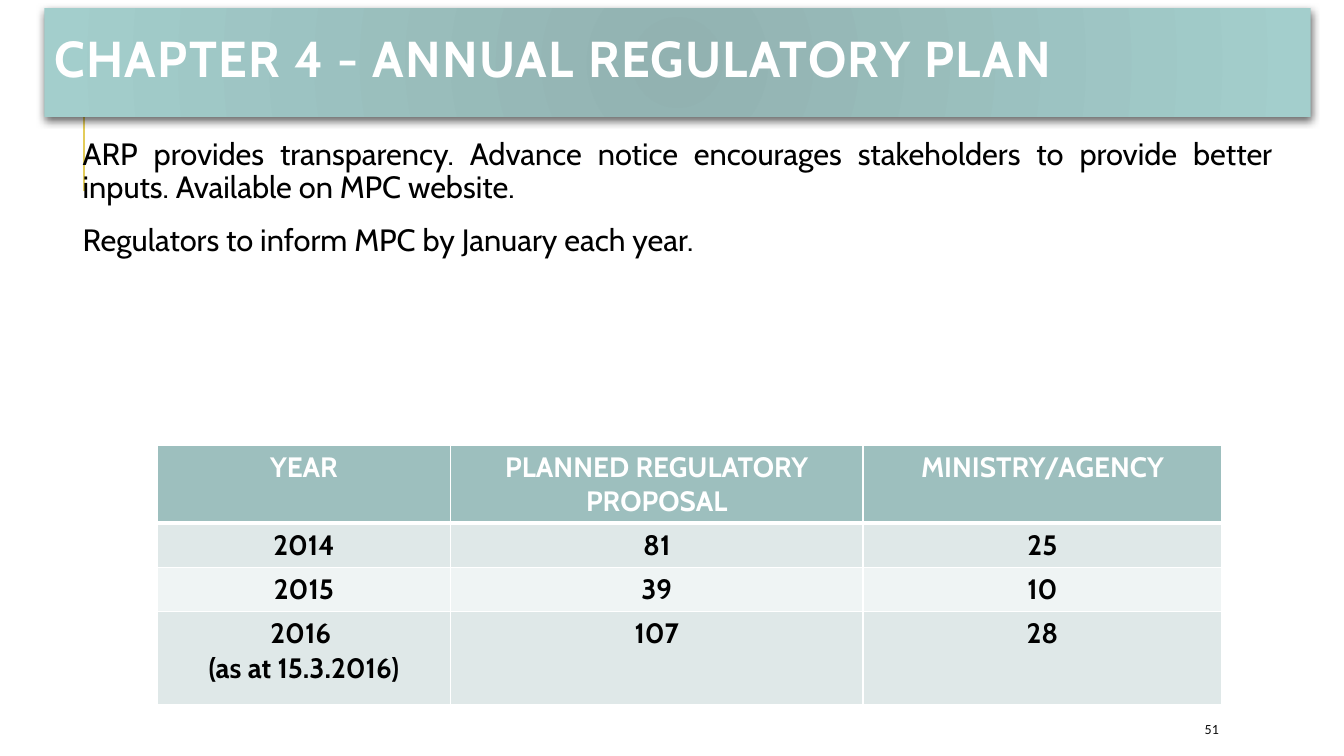
from dataclasses import dataclass
from typing import Any

import pptx
import pptx.dml.color
import pptx.enum.shapes
import pptx.enum.text
import pptx.oxml
import pptx.util
from lxml import etree
from pptx.enum.text import MSO_ANCHOR, PP_ALIGN

WIDTH, HEIGHT = pptx.util.Inches(13.33), pptx.util.Inches(7.5)
NS = 'xmlns:a="http://schemas.openxmlformats.org/drawingml/2006/main"'
COLORS = {
    "white": "FFFFFF", "black": "000000", "ink": "0D0D0D", "gold": "E3CC5A",
    "dark": "92B2B1", "light": "A3CECC", "head": "9DBFBE",
    "odd": "DFE8E8", "even": "EFF4F4",
}


@dataclass
class Area:
    """Left, top, width and height in percent of the slide."""
    left: float
    top: float
    width: float
    height: float

    def box(self) -> tuple[int, int, int, int]:
        return (across(self.left), down(self.top),
                across(self.width), down(self.height))


@dataclass
class Style:
    font: dict[str, Any]
    color: str
    para: dict[str, Any]


@dataclass
class Row:
    share: float
    fill: str
    color: str
    cells: tuple[str, str, str]


TITLE = Style({"name": "Cabin", "size": pptx.util.Pt(36), "bold": True}, "white",
              {"alignment": PP_ALIGN.LEFT, "line_spacing": 0.8})
BODY = Style({"name": "Cabin", "size": pptx.util.Pt(22)}, "black",
             {"alignment": PP_ALIGN.JUSTIFY, "line_spacing": 0.9,
              "space_after": pptx.util.Pt(2)})
NUMBER = Style({"name": "Calibri", "size": pptx.util.Pt(10)}, "ink",
               {"alignment": PP_ALIGN.LEFT})
CELL = {"name": "Cabin", "size": pptx.util.Pt(20), "bold": True}

COLS = (21.83, 30.68, 26.71)
ROWS = (
    Row(10.27, "head", "white",
        ("YEAR", "PLANNED REGULATORY PROPOSAL", "MINISTRY/AGENCY")),
    Row(5.87, "odd", "black", ("2014", "81", "25")),
    Row(5.87, "even", "black", ("2015", "39", "10")),
    Row(12.27, "odd", "black", ("2016 \n(as at 15.3.2016)", "107", "28")),
)
NOTES = (
    "ARP provides transparency. Advance notice encourages stakeholders "
    "to provide better inputs. Available on MPC website.",
    "Regulators to inform MPC by January each year.",
)


def across(share: float) -> int:
    return round(WIDTH * share / 100)


def down(share: float) -> int:
    return round(HEIGHT * share / 100)


def tint(name: str) -> pptx.dml.color.RGBColor:
    return pptx.dml.color.RGBColor.from_string(COLORS[name])


def apply(target: Any, values: dict[str, Any]) -> None:
    for key, value in values.items():
        setattr(target, key, value)


def write(frame: Any, text: str, style: Style) -> None:
    frame.text = text
    for para in frame.paragraphs:
        apply(para, style.para)
        for run in para.runs:
            apply(run.font, style.font)
            run.font.color.rgb = tint(style.color)


def add_rule(slide: Any) -> None:
    kind = pptx.enum.shapes.MSO_CONNECTOR.STRAIGHT
    rule = slide.shapes.add_connector(
        kind, across(6.23), down(25.33), across(6.23), down(12))
    rule.line.color.rgb = tint("gold")
    rule.line.width = pptx.util.Pt(1.5)
    rule._element.spPr.append(pptx.oxml.parse_xml(f"<a:effectLst {NS}/>"))


def add_body(slide: Any) -> None:
    frame = slide.shapes.add_textbox(*Area(5.03, 17.73, 90.02, 66).box()).text_frame
    inset = pptx.util.Inches(0.05)
    apply(frame, {"word_wrap": True, "margin_left": inset, "margin_right": inset,
                  "margin_top": inset, "margin_bottom": inset})
    write(frame, "\n".join(NOTES), BODY)
    for para in frame.paragraphs:
        para._p.get_or_add_pPr().set("marL", str(pptx.util.Inches(0.1)))
    for para in frame.paragraphs[1:]:
        para.space_before = pptx.util.Pt(12)


def add_edges(cell: Any, base: float) -> None:
    """Draw white cell borders, the bottom one with its own width in points."""
    props = cell._tc.get_or_add_tcPr()
    edges = {"lnL": 1, "lnR": 1, "lnT": 1, "lnB": base}
    for place, (tag, width) in enumerate(edges.items()):
        props.insert(place, pptx.oxml.parse_xml(
            f'<a:{tag} {NS} w="{pptx.util.Pt(width)}"><a:solidFill>'
            f'<a:srgbClr val="{COLORS["white"]}"/></a:solidFill></a:{tag}>'))


def add_grid(slide: Any) -> None:
    area = Area(11.7, 58.93, sum(COLS), sum(row.share for row in ROWS))
    table = slide.shapes.add_table(len(ROWS), len(COLS), *area.box()).table
    table.horz_banding = False
    for col, share in zip(table.columns, COLS):
        col.width = across(share)
    pad = pptx.util.Inches(0.13)
    for line, row in zip(table.rows, ROWS):
        line.height = down(row.share)
        style = Style(CELL, row.color, {"alignment": PP_ALIGN.CENTER})
        for cell, text in zip(line.cells, row.cells):
            apply(cell, {"margin_left": pad, "margin_right": pad})
            cell.fill.solid()
            cell.fill.fore_color.rgb = tint(row.fill)
            write(cell.text_frame, text, style)
            add_edges(cell, 3 if row.fill == "head" else 1)


def add_title(slide: Any) -> None:
    kind = pptx.enum.shapes.MSO_SHAPE.RECTANGLE
    bar = slide.shapes.add_shape(kind, *Area(3.3, 1.07, 94.22, 14.4).box())
    bar.line.fill.background()
    bar.fill.gradient()
    for stop, name in zip(bar.fill.gradient_stops, ("dark", "light")):
        stop.color.rgb = tint(name)
    props = bar._element.spPr
    line = props.find(".//{*}gradFill/{*}lin")
    line.getparent().replace(line, pptx.oxml.parse_xml(
        f'<a:path {NS} path="circle"><a:fillToRect l="50000" t="50000" '
        'r="50000" b="50000"/></a:path>'))
    shade = pptx.oxml.parse_xml(
        f'<a:effectLst {NS}><a:outerShdw blurRad="{pptx.util.Pt(6)}" '
        f'dist="{pptx.util.Pt(2)}" dir="5400000" rotWithShape="0">'
        f'<a:srgbClr val="{COLORS["black"]}"><a:alpha val="60000"/></a:srgbClr>'
        '</a:outerShdw></a:effectLst>')
    bar.shadow.inherit = False
    props.replace(props.find("{*}effectLst"), shade)
    frame = bar.text_frame
    apply(frame, {"word_wrap": True, "vertical_anchor": MSO_ANCHOR.MIDDLE})
    write(frame, "CHAPTER 4 - ANNUAL REGULATORY PLAN", TITLE)
    frame.paragraphs[0].runs[0]._r.get_or_add_rPr().set("spc", "100")


def add_number(slide: Any) -> None:
    frame = slide.shapes.add_textbox(*Area(88.9, 94.4, 7.95, 4).box()).text_frame
    apply(frame, {"word_wrap": True, "vertical_anchor": MSO_ANCHOR.MIDDLE})
    write(frame, "51", NUMBER)


def main() -> None:
    deck = pptx.Presentation()
    apply(deck, {"slide_width": WIDTH, "slide_height": HEIGHT})
    slide = deck.slides.add_slide(deck.slide_layouts[6])
    for draw in (add_rule, add_body, add_grid, add_title, add_number):
        draw(slide)
    deck.save("out.pptx")


if __name__ == "__main__":
    main()
